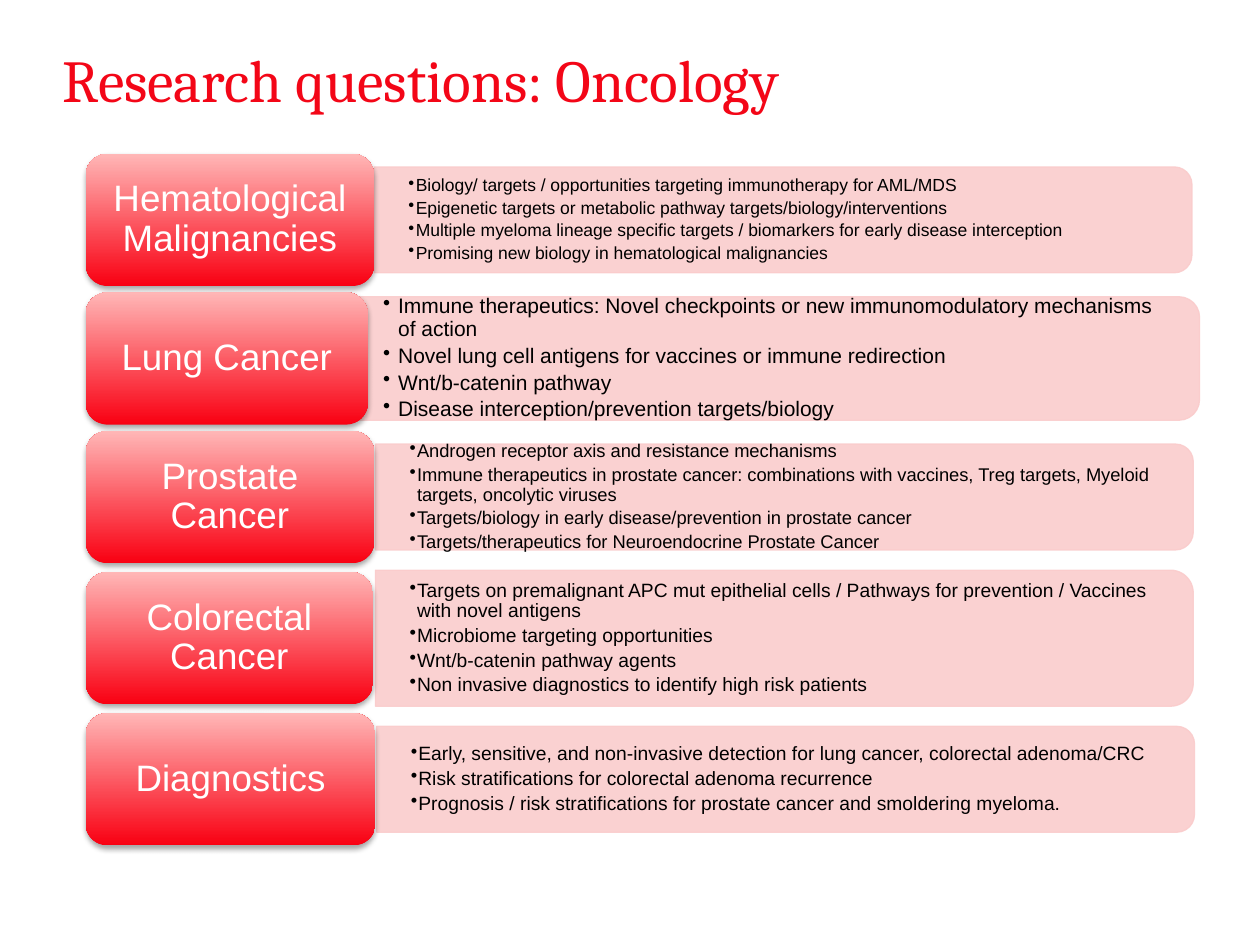
"""Build the oncology research questions slide: five red tabs with bulleted panels."""
from dataclasses import dataclass

from lxml import etree
from pptx import Presentation
from pptx.dml.color import RGBColor
from pptx.enum.shapes import MSO_SHAPE
from pptx.enum.text import MSO_ANCHOR, PP_ALIGN
from pptx.oxml import parse_xml
from pptx.oxml.ns import nsdecls, qn
from pptx.util import Inches, Pt

TAB, PANEL = MSO_SHAPE.ROUNDED_RECTANGLE, MSO_SHAPE.ROUND_2_SAME_RECTANGLE
MIDDLE, CENTER = MSO_ANCHOR.MIDDLE, PP_ALIGN.CENTER


@dataclass(frozen=True)
class Theme:
    title: RGBColor = RGBColor.from_string("F30617")
    panel: RGBColor = RGBColor.from_string("FACCCC")
    tab_dark: RGBColor = RGBColor.from_string("F90012")
    tab_light: RGBColor = RGBColor.from_string("FFB7B7")
    label: RGBColor = RGBColor.from_string("FFFFFF")
    body: RGBColor = RGBColor.from_string("000000")
    heading_font: str = "Cambria"
    body_font: str = "Arial"
    title_size: float = 34
    label_size: float = 21


T = Theme()
TAB_LEFT, TAB_H = 0.68, 1.05
SHADOW = (
    f'<a:outerShdw {nsdecls("a")} blurRad="40000" dist="23000" dir="5400000" rotWithShape="0">'
    '<a:srgbClr val="000000"><a:alpha val="35000"/></a:srgbClr></a:outerShdw>'
)

ROWS = [
    ("Hematological Malignancies", 1.22, 2.29, (2.97, 6.49, 0.84), 10, 0.06, [
        "Biology/ targets / opportunities targeting immunotherapy for AML/MDS",
        "Epigenetic targets or metabolic pathway targets/biology/interventions",
        "Multiple myeloma lineage specific targets / biomarkers for early disease interception",
        "Promising new biology in hematological malignancies"]),
    ("Lung Cancer", 2.32, 2.24, (2.77, 6.75, 0.98), 12, 0.12, [
        "Immune therapeutics: Novel checkpoints or new immunomodulatory mechanisms of action",
        "Novel lung cell antigens for vaccines or immune redirection",
        "Wnt/b-catenin pathway",
        "Disease interception/prevention targets/biology"]),
    ("Prostate Cancer", 3.42, 2.29, (2.98, 6.49, 0.84), 10.5, 0.06, [
        "Androgen receptor axis and resistance mechanisms",
        "Immune therapeutics in prostate cancer: combinations with vaccines, Treg targets, "
        "Myeloid targets, oncolytic viruses",
        "Targets/biology in early disease/prevention in prostate cancer",
        "Targets/therapeutics for Neuroendocrine Prostate Cancer"]),
    ("Colorectal Cancer", 4.54, 2.28, (2.98, 6.49, 1.08), 11, 0.06, [
        "Targets on premalignant APC mut epithelial cells / Pathways for prevention / "
        "Vaccines with novel antigens",
        "Microbiome targeting opportunities",
        "Wnt/b-catenin pathway agents",
        "Non invasive diagnostics to identify high risk patients"]),
    ("Diagnostics", 5.66, 2.3, (2.99, 6.49, 0.84), 11, 0.06, [
        "Early, sensitive, and non-invasive detection for lung cancer, colorectal adenoma/CRC",
        "Risk stratifications for colorectal adenoma recurrence",
        "Prognosis / risk stratifications for prostate cancer and smoldering myeloma."]),
]


def set_frame(tf, x_inset, y_inset, anchor):
    tf.word_wrap = True
    tf.vertical_anchor = anchor
    tf.margin_left = tf.margin_right = Inches(x_inset)
    tf.margin_top = tf.margin_bottom = Inches(y_inset)


def set_font(p, name, size, color):
    for r in p.runs:
        r.font.name, r.font.size = name, Pt(size)
        r.font.color.rgb = color


prs = Presentation()
prs.slide_width, prs.slide_height = Inches(10), Inches(7.5)
s = prs.slides.add_slide(prs.slide_layouts[6])

tf = s.shapes.add_textbox(Inches(0.5), Inches(0.34), Inches(9), Inches(0.73)).text_frame
set_frame(tf, 0, 0, MSO_ANCHOR.TOP)
tf.text = "Research questions: Oncology"
set_font(tf.paragraphs[0], T.heading_font, T.title_size, T.title)

for label, top, tab_w, (left, width, height), size, indent, bullets in ROWS:
    middle = top + TAB_H / 2
    panel = s.shapes.add_shape(
        PANEL, Inches(left + (width - height) / 2), Inches(middle - width / 2),
        Inches(height), Inches(width))
    panel.rotation = 90
    panel.shadow.inherit = False
    panel.fill.solid()
    panel.fill.fore_color.rgb = panel.line.color.rgb = T.panel
    panel.line.width = Pt(0.75)
    for clr in panel.fill._xPr.iter(qn("a:srgbClr")):
        etree.SubElement(clr, qn("a:alpha"), val="90000")

    box_h = height - 0.08
    box = s.shapes.add_textbox(
        Inches(left), Inches(middle - box_h / 2), Inches(width - 0.04), Inches(box_h))
    tf = box.text_frame
    set_frame(tf, 0.27, 0.14, MIDDLE)
    tf.text = "\n".join(bullets)
    for p in tf.paragraphs:
        p.level = 1
        p.line_spacing, p.space_after = 0.9, Pt(size * 0.2)
        pPr = p._p.get_or_add_pPr()
        pPr.set("marL", str(Inches(indent)))
        pPr.set("indent", str(-Inches(indent)))
        etree.SubElement(pPr, qn("a:buChar"), char="•")
        set_font(p, T.body_font, size, T.body)

    tab = s.shapes.add_shape(TAB, Inches(TAB_LEFT), Inches(top), Inches(tab_w), Inches(TAB_H))
    tab.fill.gradient()
    tab.fill.gradient_angle = 90
    for stop, color, position in zip(tab.fill.gradient_stops, (T.tab_dark, T.tab_light), (0, 1)):
        stop.color.rgb, stop.position = color, position
    tab.line.fill.background()
    tab.shadow.inherit = False
    tab._element.spPr.find(qn("a:effectLst")).append(parse_xml(SHADOW))
    tf = tab.text_frame
    set_frame(tf, 0.14, 0.09, MIDDLE)
    tf.text = label
    p = tf.paragraphs[0]
    p.alignment, p.line_spacing = CENTER, 0.9
    set_font(p, T.body_font, T.label_size, T.label)

prs.save("out.pptx")
